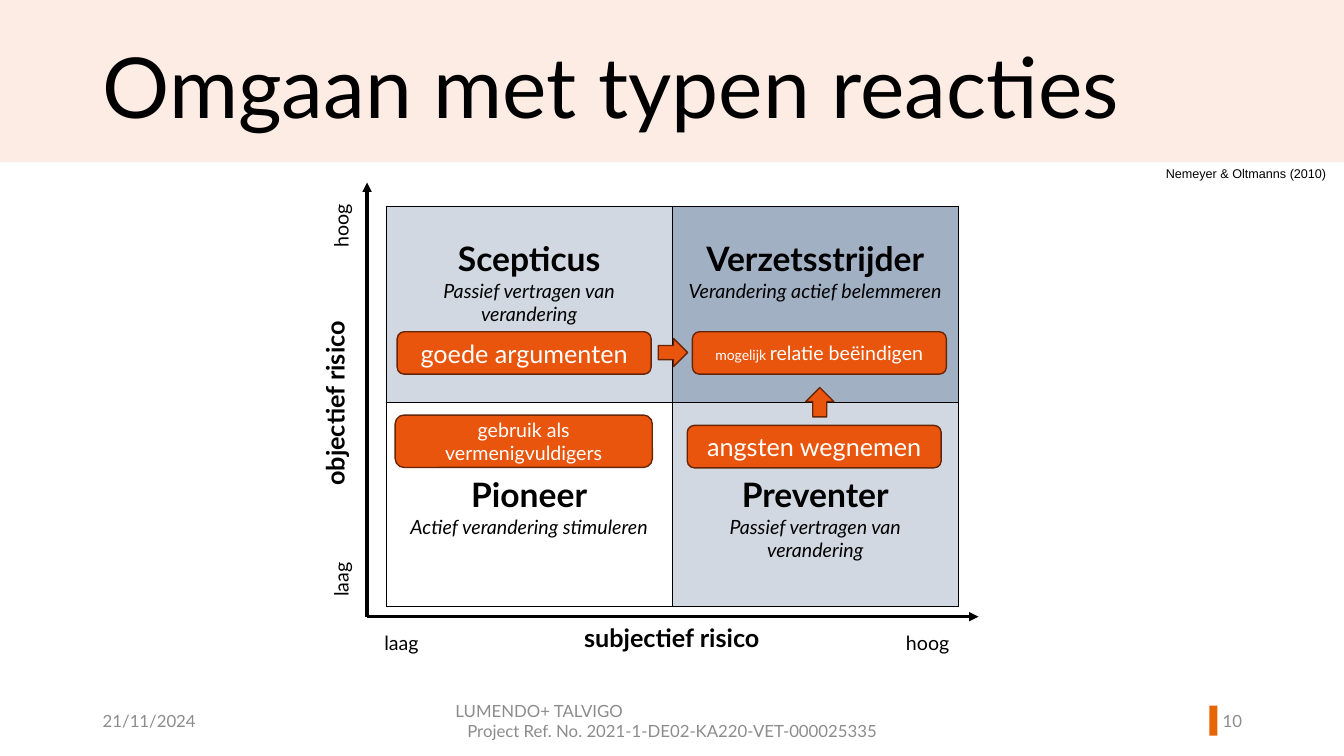
from dataclasses import dataclass

from lxml.etree import SubElement
from pptx import Presentation
from pptx.dml.color import RGBColor
from pptx.enum.shapes import MSO_CONNECTOR, MSO_SHAPE
from pptx.enum.text import MSO_ANCHOR, PP_ALIGN
from pptx.oxml.ns import qn
from pptx.util import Cm, Pt


@dataclass(frozen=True)
class Theme:
    font: str = "Lato"
    source_font: str = "Arial"
    black: str = "000000"
    white: str = "FFFFFF"
    grey: str = "8C8C8C"
    band: str = "FDECE3"
    bar: str = "E86507"
    orange: str = "E9550D"
    outline: str = "662506"
    pale_blue: str = "D1D8E1"
    mid_blue: str = "A2B0C4"
    title: int = 60
    heading: int = 24
    large: int = 18
    body: int = 14
    footer: int = 12
    small: int = 10
    source: int = 9


THEME = Theme()


@dataclass(frozen=True)
class Area:
    left: float
    top: float
    width: float
    height: float

    def lengths(self) -> tuple:
        return Cm(self.left), Cm(self.top), Cm(self.width), Cm(self.height)


@dataclass(frozen=True)
class Label:
    text: str
    area: Area
    size: int
    color: str = THEME.black
    bold: bool = False
    rotation: int = 0
    align: PP_ALIGN = PP_ALIGN.CENTER
    anchor: MSO_ANCHOR = MSO_ANCHOR.TOP
    font: str = THEME.font


@dataclass(frozen=True)
class Block:
    area: Area
    kind: MSO_SHAPE = MSO_SHAPE.ROUNDED_RECTANGLE
    fill: str = THEME.orange
    outline: str | None = THEME.outline
    rotation: int = 0
    text: str = ""
    size: int = THEME.large


@dataclass(frozen=True)
class Quadrant:
    row: int
    column: int
    name: str
    reaction: str
    fill: str


def format_span(span, size: int, color: str, bold: bool = False,
                italic: bool = False, font: str = THEME.font) -> None:
    span.font.name = font
    span.font.size = Pt(size)
    span.font.bold = bold
    span.font.italic = italic
    span.font.color.rgb = RGBColor.from_string(color)


def add_label(page, label: Label):
    box = page.shapes.add_textbox(*label.area.lengths())
    box.rotation = label.rotation
    frame = box.text_frame
    frame.word_wrap = True
    frame.vertical_anchor = label.anchor
    frame.text = label.text
    for para in frame.paragraphs:
        para.alignment = label.align
        for span in para.runs:
            format_span(span, label.size, label.color, label.bold, font=label.font)
    return box


def add_block(page, block: Block):
    shape = page.shapes.add_shape(block.kind, *block.area.lengths())
    shape.shadow.inherit = False
    shape.rotation = block.rotation
    shape.fill.solid()
    shape.fill.fore_color.rgb = RGBColor.from_string(block.fill)
    if block.outline:
        shape.line.color.rgb = RGBColor.from_string(block.outline)
        shape.line.width = Pt(1)
    else:
        shape.line.fill.background()
    if block.text:
        shape.text_frame.text = block.text
        shape.text_frame.vertical_anchor = MSO_ANCHOR.MIDDLE
        para = shape.text_frame.paragraphs[0]
        para.alignment = PP_ALIGN.CENTER
        format_span(para.runs[0], block.size, THEME.white)
    return shape


def add_axis(page, end_left: float, end_top: float) -> None:
    axis = page.shapes.add_connector(MSO_CONNECTOR.STRAIGHT, Cm(9.25), Cm(15.54),
                                     Cm(end_left), Cm(end_top))
    axis.line.color.rgb = RGBColor.from_string(THEME.black)
    axis.line.width = Pt(2.25)
    SubElement(axis.line._get_or_add_ln(), qn("a:tailEnd"), type="triangle")
    SubElement(axis._element.spPr, qn("a:effectLst"))


def add_borders(cell) -> None:
    properties = cell._tc.get_or_add_tcPr()
    for side in ("lnL", "lnR", "lnT", "lnB"):
        border = SubElement(properties, qn(f"a:{side}"), w=str(Pt(1)))
        fill = SubElement(border, qn("a:solidFill"))
        SubElement(fill, qn("a:srgbClr"), val=THEME.black)


def add_matrix(page, quadrants: list[Quadrant]) -> None:
    area = Area(9.73, 5.21, 14.42, 10.08)
    table = page.shapes.add_table(2, 2, *area.lengths()).table
    table.first_row = table.horz_banding = False
    for row, height in zip(table.rows, (4.93, 5.15)):
        row.height = Cm(height)
    for quadrant in quadrants:
        cell = table.cell(quadrant.row, quadrant.column)
        add_borders(cell)
        cell.fill.solid()
        cell.fill.fore_color.rgb = RGBColor.from_string(quadrant.fill)
        cell.margin_top = Cm((0.8, 1.82)[quadrant.row])
        cell.text_frame.text = f"{quadrant.name}\n{quadrant.reaction}"
        name, reaction = cell.text_frame.paragraphs
        name.alignment = reaction.alignment = PP_ALIGN.CENTER
        format_span(name.runs[0], THEME.heading, THEME.black, bold=True)
        format_span(reaction.runs[0], THEME.body, THEME.black, italic=True)


PASSIVE = "Passief vertragen van verandering"
QUADRANTS = [
    Quadrant(0, 0, "Scepticus", PASSIVE, THEME.pale_blue),
    Quadrant(0, 1, "Verzetsstrijder", "Verandering actief belemmeren", THEME.mid_blue),
    Quadrant(1, 0, "Pioneer", "Actief verandering stimuleren", THEME.white),
    Quadrant(1, 1, "Preventer", PASSIVE, THEME.pale_blue),
]
AXIS_LABELS = [
    Label("subjectief risico", Area(13.92, 15.56, 6.02, 1.27), THEME.large, bold=True),
    Label("objectief risico", Area(5.97, 9.53, 5.18, 1.27), THEME.large, bold=True,
          rotation=270),
    Label("hoog", Area(7.52, 5.26, 2.16, 0.86), THEME.body, rotation=270),
    Label("laag", Area(7.52, 14.17, 2.16, 0.86), THEME.body, rotation=270),
    Label("laag", Area(9.04, 15.77, 2.16, 0.86), THEME.body),
    Label("hoog", Area(22.3, 15.77, 2.16, 0.86), THEME.body),
]
ADVICE = [
    Block(Area(10.01, 8.36, 6.4, 1.07), text="goede argumenten"),
    Block(Area(17.32, 10.72, 6.4, 1.07), text="angsten wegnemen"),
    Block(Area(9.96, 10.46, 6.48, 1.32), text="gebruik als vermenigvuldigers",
          size=THEME.body),
    Block(Area(16.59, 8.53, 0.74, 0.71), MSO_SHAPE.RIGHT_ARROW),
    Block(Area(20.29, 9.78, 0.74, 0.71), MSO_SHAPE.RIGHT_ARROW, rotation=270),
]


def add_footer(page) -> None:
    parts = [
        ("21/11/2024", 2.34, 7.62, PP_ALIGN.LEFT),
        ("LUMENDO+ TALVIGO\nProject Ref. No. 2021-1-DE02-KA220-VET-000025335",
         11.23, 11.43, PP_ALIGN.CENTER),
        ("10", 29.9, 1.65, PP_ALIGN.RIGHT),
    ]
    for text, left, width, align in parts:
        box = add_label(page, Label(text, Area(left, 17.65, width, 1.02), THEME.footer,
                                    THEME.grey, align=align, anchor=MSO_ANCHOR.MIDDLE))
        if "\n" in text:
            box.text_frame.paragraphs[0].alignment = PP_ALIGN.LEFT


def main() -> None:
    deck = Presentation()
    deck.slide_width, deck.slide_height = Cm(33.87), Cm(19.05)
    page = deck.slides.add_slide(deck.slide_layouts[6])

    # Title band and footer
    add_block(page, Block(Area(0, 0, 33.87, 4.09), MSO_SHAPE.RECTANGLE, THEME.band, None))
    add_block(page, Block(Area(30.48, 17.78, 0.2, 0.76), MSO_SHAPE.RECTANGLE,
                          THEME.bar, None))
    add_footer(page)
    title = add_label(page, Label("Omgaan met typen reacties",
                                  Area(2.34, 1.04, 26.97, 2.16), THEME.title,
                                  align=PP_ALIGN.LEFT))
    title.text_frame.paragraphs[0].line_spacing = 0.9

    # Axes and matrix
    add_axis(page, 9.25, 4.6)
    add_axis(page, 24.66, 15.54)
    add_matrix(page, QUADRANTS)
    for label in AXIS_LABELS:
        add_label(page, label)

    # Advice per type, with the last one in two sizes
    for block in ADVICE:
        add_block(page, block)
    ending = add_block(page, Block(Area(17.45, 8.36, 6.4, 1.07), text="mogelijk ",
                                   size=THEME.small))
    span = ending.text_frame.paragraphs[0].add_run()
    span.text = "relatie beëindigen"
    format_span(span, THEME.body, THEME.white)

    # Source
    add_label(page, Label("Nemeyer & Oltmanns (2010)", Area(29.13, 4.06, 4.72, 0.64),
                          THEME.source, align=PP_ALIGN.JUSTIFY, font=THEME.source_font))
    deck.save("out.pptx")


if __name__ == "__main__":
    main()
